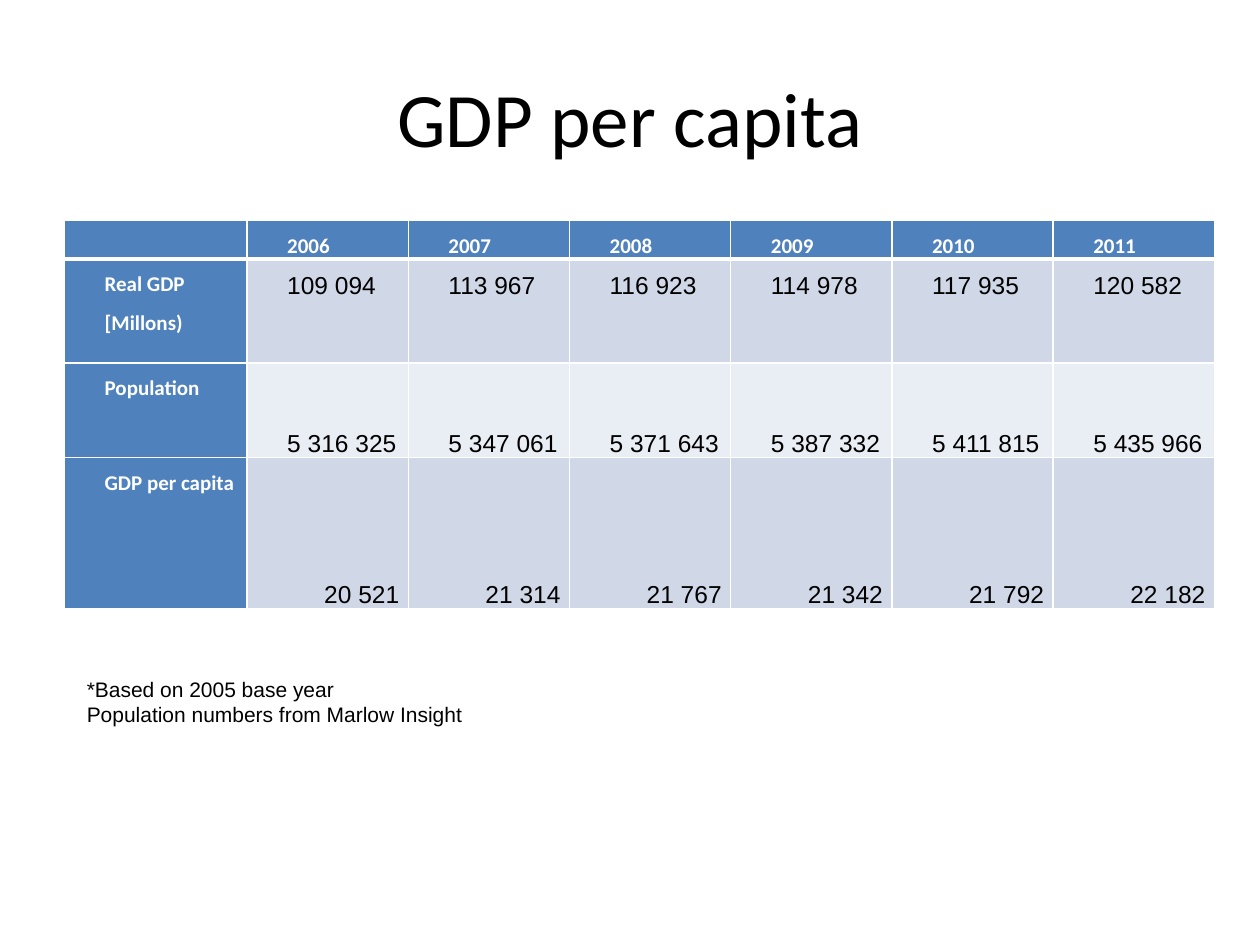
from lxml import etree
from pptx import Presentation
from pptx import util as u
from pptx.dml.color import RGBColor
from pptx.enum import text
from pptx.oxml.ns import qn

TITLE = "GDP per capita"
YEARS = ["", "2006", "2007", "2008", "2009", "2010", "2011"]
ROWS = [
    ["Real GDP\n[Millons)", "109 094", "113 967", "116 923", "114 978", "117 935", "120 582"],
    ["Population", "5 316 325", "5 347 061", "5 371 643", "5 387 332", "5 411 815", "5 435 966"],
    ["GDP per capita", "20 521", "21 314", "21 767", "21 342", "21 792", "22 182"],
]
NOTES = "*Based on 2005 base year\nPopulation numbers from Marlow Insight"

THEME = {
    "ink": "000000", "white": "FFFFFF", "head": "4F81BD",
    "bands": ["D0D8E8", "E9EDF4"],
    "serif": "Calibri", "sans": "Arial",
    "title": 44, "label": 12, "value": 14, "note": 12,
    "thin": 1, "thick": 3,
}
ALIGN, ANCHOR = text.PP_ALIGN, text.MSO_ANCHOR
VALUES = [
    (ALIGN.JUSTIFY, ANCHOR.TOP),
    (ALIGN.LEFT, ANCHOR.BOTTOM),
    (ALIGN.RIGHT, ANCHOR.BOTTOM),
]
WIDTHS = [3.68] + [3.25] * 6
HEIGHTS = [0.77, 2.1, 1.9, 3.05]


def write(frame, words, size, face, color="ink", bold=False,
          align=ALIGN.JUSTIFY, space=None, hang=False):
    for i, line in enumerate(words.split("\n")):
        para = frame.paragraphs[0] if i == 0 else frame.add_paragraph()
        para.alignment = align
        if space:
            para.line_spacing = space
        if hang:
            props = para._p.get_or_add_pPr()
            props.set("marL", str(u.Cm(1.27)))
            props.set("indent", str(u.Cm(-0.64)))
        if not line:
            end = etree.SubElement(para._p, qn("a:endParaRPr"))
            end.set("sz", str(size * 100))
            continue
        run = para.add_run()
        run.text = line
        font = run.font
        font.size, font.name, font.bold = u.Pt(size), THEME[face], bold
        font.color.rgb = RGBColor.from_string(THEME[color])


def label(slide, place, words, wrap=True, **form):
    box = slide.shapes.add_textbox(*map(u.Cm, place))
    frame = box.text_frame
    frame.word_wrap = wrap
    frame.vertical_anchor = ANCHOR.MIDDLE
    write(frame, words, **form)


def edge(cell, top, base):
    props = cell._tc.get_or_add_tcPr()
    thin = THEME["thin"]
    for side, width in zip("LRTB", (thin, thin, top, base)):
        line = etree.SubElement(props, qn("a:ln" + side), w=str(u.Pt(width)))
        fill = etree.SubElement(line, qn("a:solidFill"))
        etree.SubElement(fill, qn("a:srgbClr"), val=THEME["white"])


def fill_cell(cell, row, col, words):
    head = row == 0 or col == 0
    thin, thick = THEME["thin"], THEME["thick"]
    edge(cell, thick if row == 1 else thin, thick if row == 0 else thin)
    color = THEME["head"] if head else THEME["bands"][(row - 1) % 2]
    cell.fill.solid()
    cell.fill.fore_color.rgb = RGBColor.from_string(color)
    cell.margin_left = cell.margin_right = u.Cm(0.18)
    cell.margin_top = cell.margin_bottom = 0
    if head:
        align, anchor = ALIGN.JUSTIFY, ANCHOR.TOP
        form = {"size": THEME["label"], "face": "serif", "color": "white", "bold": True}
    else:
        align, anchor = VALUES[row - 1]
        form = {"size": THEME["value"], "face": "sans"}
    cell.vertical_anchor = anchor
    write(cell.text_frame, words, align=align, space=1.5, hang=True, **form)


def main():
    deck = Presentation()
    deck.slide_width, deck.slide_height = u.Cm(25.4), u.Cm(19.05)
    slide = deck.slides.add_slide(deck.slide_layouts[6])
    label(slide, (1.27, 0.76, 22.86, 3.18), TITLE, size=THEME["title"],
          face="serif", align=ALIGN.CENTER)
    data = [YEARS] + ROWS
    place = map(u.Cm, (1.3, 4.45, sum(WIDTHS), sum(HEIGHTS)))
    table = slide.shapes.add_table(len(data), len(YEARS), *place).table
    for col, width in zip(table.columns, WIDTHS):
        col.width = u.Cm(width)
    for row, height in zip(table.rows, HEIGHTS):
        row.height = u.Cm(height)
    for r, line in enumerate(data):
        for c, words in enumerate(line):
            fill_cell(table.cell(r, c), r, c, words)
    label(slide, (1.5, 13.51, 23.5, 1.27), NOTES, size=THEME["note"], face="sans")
    deck.save("out.pptx")


if __name__ == "__main__":
    main()
